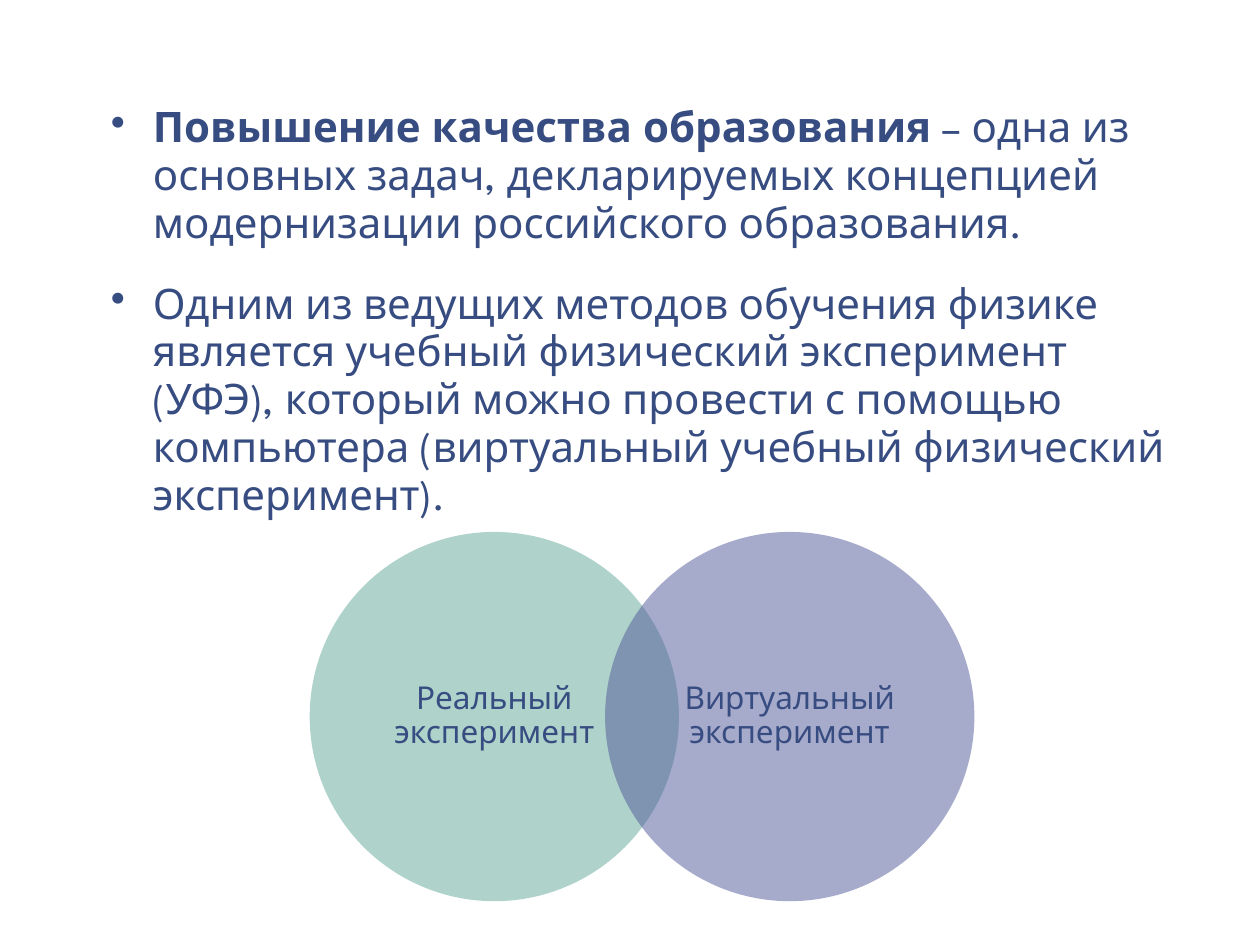
from lxml import etree
from pptx import Presentation
from pptx.dml.color import RGBColor
from pptx.enum.shapes import MSO_SHAPE
from pptx.enum.text import MSO_ANCHOR, PP_ALIGN
from pptx.oxml.ns import qn
from pptx.util import Pt

OVAL = MSO_SHAPE.OVAL
MIDDLE = MSO_ANCHOR.MIDDLE
CENTER = PP_ALIGN.CENTER

FONT = "League Spartan"
COLORS = {"text": "374C81", "real": "61A796", "virtual": "4E5798"}

THESES = [
    [("Повышение качества образования ", True),
     ("– одна из основных задач, декларируемых концепцией модернизации "
      "российского образования.", False)],
    [("Одним из ведущих методов обучения физике является учебный физический "
      "эксперимент (УФЭ), который можно провести с помощью компьютера "
      "(виртуальный учебный физический эксперимент).", False)],
]
EXPERIMENTS = [("Реальный эксперимент", "real"),
               ("Виртуальный эксперимент", "virtual")]

CIRCLE_LEFT, CIRCLE_TOP = 177, 304
DIAMETER = 211
CIRCLE_STEP = 0.8 * DIAMETER


def set_margins(frame, side, top):
    frame.word_wrap = True
    frame.margin_left = frame.margin_right = Pt(side)
    frame.margin_top = frame.margin_bottom = Pt(top)


def style_paragraph(paragraph, size, line_spacing):
    paragraph.line_spacing = line_spacing
    paragraph.font.name = FONT
    paragraph.font.size = Pt(size)
    paragraph.font.color.rgb = RGBColor.from_string(COLORS["text"])


def add_bullet(paragraph, indent):
    """Give the paragraph a round bullet with a hanging indent."""
    properties = paragraph._p.get_or_add_pPr()
    properties.set("marL", str(Pt(indent)))
    properties.set("indent", str(-Pt(indent)))
    etree.SubElement(properties, qn("a:buChar"), char="•")


def add_theses(slide):
    box = slide.shapes.add_textbox(Pt(54), Pt(54.7), Pt(629.3), Pt(306))
    frame = box.text_frame
    set_margins(frame, 9.4, 5)
    for index, thesis in enumerate(THESES):
        paragraph = frame.add_paragraph() if index else frame.paragraphs[0]
        add_bullet(paragraph, 24)
        style_paragraph(paragraph, 24, 0.95)
        if index:
            paragraph.space_before = Pt(18.7)
        for text, bold in thesis:
            run = paragraph.add_run()
            run.text = text
            run.font.bold = bold


def add_venn_circle(slide, left, label, color):
    """Add a half-transparent circle with a centred label."""
    circle = slide.shapes.add_shape(
        OVAL, Pt(left), Pt(CIRCLE_TOP), Pt(DIAMETER), Pt(DIAMETER))
    circle.shadow.inherit = False
    circle.line.fill.background()
    circle.fill.solid()
    circle.fill.fore_color.rgb = RGBColor.from_string(COLORS[color])
    fill_color = circle._element.spPr.find(f".//{qn('a:srgbClr')}")
    etree.SubElement(fill_color, qn("a:alpha"), val="50000")

    frame = circle.text_frame
    set_margins(frame, 11.5, 2)
    frame.vertical_anchor = MIDDLE
    paragraph = frame.paragraphs[0]
    paragraph.text = label
    paragraph.alignment = CENTER
    style_paragraph(paragraph, 18, 0.9)


def main():
    presentation = Presentation()
    presentation.slide_width, presentation.slide_height = Pt(720), Pt(540)
    slide = presentation.slides.add_slide(presentation.slide_layouts[6])
    add_theses(slide)
    for index, (label, color) in enumerate(EXPERIMENTS):
        add_venn_circle(slide, CIRCLE_LEFT + index * CIRCLE_STEP, label, color)
    presentation.save("out.pptx")


if __name__ == "__main__":
    main()
